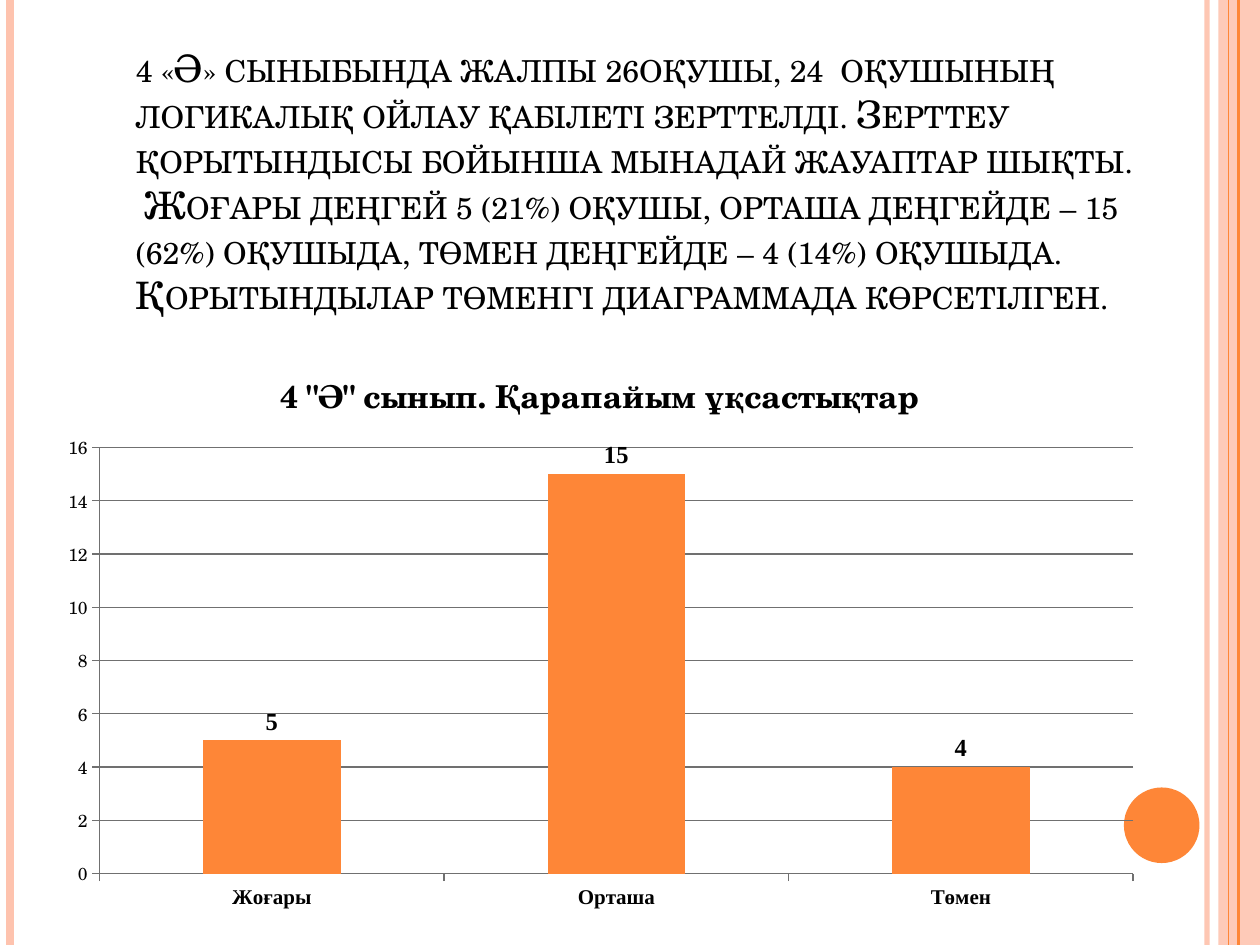
import pptx
import pptx.util
import pptx.chart.data
import pptx.dml.color
import pptx.enum.chart
import pptx.enum.shapes
import pptx.oxml
import pptx.oxml.ns
import lxml.etree
from dataclasses import dataclass

Inches = pptx.util.Inches
Pt = pptx.util.Pt
RGB = pptx.dml.color.RGBColor.from_string
qn = pptx.oxml.ns.qn


@dataclass(frozen=True)
class Theme:
    orange: RGB = RGB("FE8637")
    peach: RGB = RGB("FEC3AE")
    ink: RGB = RGB("000000")
    grid: RGB = RGB("707070")
    serif: str = "TeX Gyre Schola"
    label_serif: str = "Times New Roman"
    body: Pt = Pt(21.6)
    chart_title: Pt = Pt(18)
    value: Pt = Pt(14)
    category: Pt = Pt(12)
    tick: Pt = Pt(10)


theme = Theme()


def write(paragraph, text, *, size, face=theme.serif, color=theme.ink, bold=False, small_caps=False):
    run = paragraph.add_run()
    run.text = text
    run.font.size = size
    run.font.name = face
    run.font.bold = bold
    run.font.color.rgb = color
    if small_caps:
        run.font._element.set("cap", "small")


def set_opacity(fill_parent, percent):
    color = fill_parent.find(".//" + qn("a:srgbClr"))
    lxml.etree.SubElement(color, qn("a:alpha"), val=str(percent * 1000))


deck = pptx.Presentation()
deck.slide_width, deck.slide_height = Inches(10), Inches(7.5)
slide = deck.slides.add_slide(deck.slide_layouts[6])
shapes = slide.shapes

band = shapes.add_shape(pptx.enum.shapes.MSO_SHAPE.RECTANGLE,
                        Inches(9.67), Inches(0), Inches(0.33), Inches(7.5))
dot = shapes.add_shape(pptx.enum.shapes.MSO_SHAPE.OVAL,
                       Inches(8.92), Inches(6.25), Inches(0.6), Inches(0.6))
for ornament, color in ((band, theme.peach), (dot, theme.orange)):
    ornament.shadow.inherit = False
    ornament.fill.solid()
    ornament.fill.fore_color.rgb = color
    ornament.line.fill.background()
set_opacity(band._element.spPr, 87)

for x, color, width, opacity in (
    (9.58, theme.peach, 3, 93),
    (0.08, theme.peach, 4.5, 100),
    (9.83, theme.orange, 1.5, 100),
    (9.75, theme.orange, 0.75, 100),
):
    stripe = shapes.add_connector(pptx.enum.shapes.MSO_CONNECTOR.STRAIGHT,
                                  Inches(x), Inches(0), Inches(x), Inches(7.5))
    stripe.line.color.rgb = color
    stripe.line.width = Pt(width)
    if opacity < 100:
        set_opacity(stripe._element.spPr, opacity)
    lxml.etree.SubElement(stripe._element.spPr, qn("a:effectLst"))

findings = shapes.add_textbox(Inches(0.98), Inches(0.31), Inches(8.17), Inches(2.3)).text_frame
findings.word_wrap = True
write(findings.paragraphs[0],
      "4 «Ә» сыныбында жалпы 26оқушы, 24  оқушының логикалық ойлау қабілеті зерттелді. "
      "Зерттеу қорытындысы бойынша мынадай жауаптар шықты.  Жоғары деңгей 5 (21%) оқушы, "
      "орташа деңгейде – 15 (62%) оқушыда, төмен деңгейде – 4 (14%) оқушыда.",
      size=theme.body, small_caps=True)
write(findings.add_paragraph(), "Қорытындылар төменгі диаграммада көрсетілген.",
      size=theme.body, small_caps=True)

levels = pptx.chart.data.CategoryChartData()
levels.categories = ["Жоғары", "Орташа", "Төмен"]
levels.add_series("Series 1", [5, 15, 4])
chart = shapes.add_chart(pptx.enum.chart.XL_CHART_TYPE.COLUMN_CLUSTERED,
                         Inches(0.35), Inches(2.73), Inches(8.82), Inches(4.57), levels).chart
chart.has_legend = False
chart.font.name = theme.serif
chart.font.size = theme.tick
chart.font.color.rgb = theme.ink
chart.has_title = True
write(chart.chart_title.text_frame.paragraphs[0], '4 "Ә" сынып. Қарапайым ұқсастықтар',
      size=theme.chart_title, bold=True)
chart.chart_title.include_in_layout = False

columns = chart.plots[0]
columns.gap_width = 150
columns.vary_by_categories = False
pupils = columns.series[0]
pupils.format.fill.solid()
pupils.format.fill.fore_color.rgb = theme.orange
pupils.invert_if_negative = False
columns.has_data_labels = True
counts = columns.data_labels
counts.show_value = True
counts.position = pptx.enum.chart.XL_LABEL_POSITION.OUTSIDE_END

for axis in (chart.category_axis, chart.value_axis):
    axis.major_tick_mark = pptx.enum.chart.XL_TICK_MARK.OUTSIDE
    axis.format.line.color.rgb = theme.grid
    axis.format.line.width = Pt(0.75)
for font, size in ((chart.category_axis.tick_labels.font, theme.category),
                   (counts.font, theme.value)):
    font.name = theme.label_serif
    font.size = size
    font.bold = True
    font.color.rgb = theme.ink
scale = chart.value_axis
scale.minimum_scale, scale.maximum_scale, scale.major_unit = 0, 16, 2
scale.has_major_gridlines = True
scale.major_gridlines.format.line.color.rgb = theme.grid
scale.major_gridlines.format.line.width = Pt(0.75)

plot_area = chart._chartSpace.find(".//" + qn("c:plotArea"))
for old_layout in plot_area.findall(qn("c:layout")):
    plot_area.remove(old_layout)
layout = lxml.etree.Element(qn("c:layout"))
plot_area.insert(0, layout)
manual = lxml.etree.SubElement(layout, qn("c:manualLayout"))
for tag, setting in (("layoutTarget", "inner"), ("xMode", "edge"), ("yMode", "edge"),
                     ("x", "0.05"), ("y", "0.18"), ("w", "0.93"), ("h", "0.74")):
    lxml.etree.SubElement(manual, qn("c:" + tag), val=setting)

deck.save("out.pptx")
